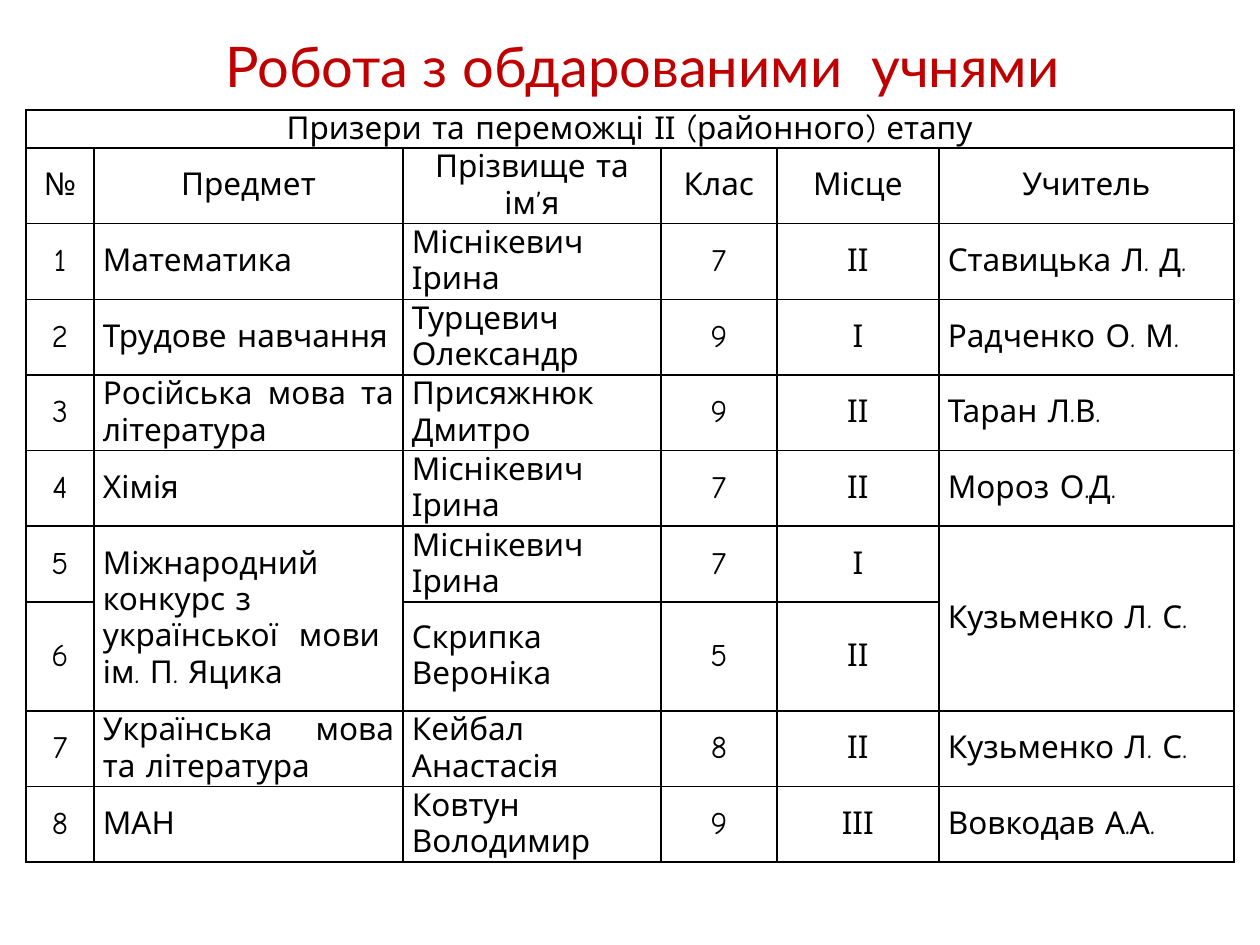
import pptx
import pptx.util
import pptx.dml.color
import pptx.enum.text
import pptx.oxml
import pptx.oxml.ns
from dataclasses import dataclass


@dataclass(frozen=True)
class Theme:
    title: str = "C00000"
    text: str = "000000"
    border: str = "000000"
    title_font: str = "Lato"
    table_font: str = "Comic Neue"
    title_size: int = 32
    table_size: int = 18
    border_width: int = 1


theme = Theme()
SCALE = 914400 / 126
ALIGN = pptx.enum.text.PP_ALIGN


def px(n):
    return pptx.util.Emu(round(n * SCALE))


def style(p, name, size, color, align):
    p.font.name = name
    p.font.size = pptx.util.Pt(size)
    p.font.color.rgb = pptx.dml.color.RGBColor.from_string(color)
    p.alignment = align


prs = pptx.Presentation()
prs.slide_width, prs.slide_height = px(1260), px(945)
s = prs.slides.add_slide(prs.slide_layouts[6])

tb = s.shapes.add_textbox(px(26), px(25), px(1234), px(81))
tf = tb.text_frame
tf.word_wrap = True
tf.auto_size = pptx.enum.text.MSO_AUTO_SIZE.SHAPE_TO_FIT_TEXT
p = tf.paragraphs[0]
p.text = "Робота з обдарованими  учнями"
style(p, theme.title_font, theme.title_size, theme.title, ALIGN.CENTER)

rows = [
    ["Призери та переможці ІІ (районного) етапу", "", "", "", "", ""],
    ["№", "Предмет", "Прізвище та ім’я", "Клас", "Місце", "Учитель"],
    ["1", "Математика", "Міснікевич Ірина", "7", "ІІ", "Ставицька Л. Д."],
    ["2", "Трудове навчання", "Турцевич Олександр", "9", "І", "Радченко О. М."],
    ["3", "Російська мова та література", "Присяжнюк Дмитро", "9", "ІІ", "Таран Л.В."],
    ["4", "Хімія", "Міснікевич Ірина", "7", "ІІ", "Мороз О.Д."],
    ["5", "Міжнародний\nконкурс з української  мови\nім. П. Яцика",
     "Міснікевич Ірина", "7", "І", "Кузьменко Л. С."],
    ["6", "", "Скрипка Вероніка", "5", "ІІ", ""],
    ["7", "Українська мова та література", "Кейбал Анастасія", "8", "ІІ", "Кузьменко Л. С."],
    ["8", "МАН", "Ковтун Володимир", "9", "ІІІ", "Вовкодав А.А."],
]
widths = [68, 309, 258, 116, 162, 295]
heights = [38] + [75] * 6 + [109] + [75] * 2
justified = {1, 2, 5}

table = s.shapes.add_table(len(rows), len(widths), px(26), px(110),
                           px(sum(widths)), px(sum(heights))).table
for col, width in zip(table.columns, widths):
    col.width = px(width)
for row, height in zip(table.rows, heights):
    row.height = px(height)

for r, values in enumerate(rows):
    for c, value in enumerate(values):
        cell = table.cell(r, c)
        cell.text = value
        cell.vertical_anchor = pptx.enum.text.MSO_ANCHOR.MIDDLE
        cell.margin_left = cell.margin_right = px(9)
        cell.margin_top = cell.margin_bottom = 0
        paragraphs = cell.text_frame.paragraphs
        if len(paragraphs) > 1:
            align = ALIGN.LEFT
        elif r > 1 and c in justified:
            align = ALIGN.JUSTIFY
        else:
            align = ALIGN.CENTER
        for p in paragraphs:
            style(p, theme.table_font, theme.table_size, theme.text, align)
        tcPr = cell._tc.get_or_add_tcPr()
        for side in ("lnL", "lnR", "lnT", "lnB"):
            tcPr.append(pptx.oxml.parse_xml(
                f'<a:{side} {pptx.oxml.ns.nsdecls("a")} w="{theme.border_width * 12700}">'
                f'<a:solidFill><a:srgbClr val="{theme.border}"/></a:solidFill></a:{side}>'))
        cell.fill.background()

table.cell(0, 0).merge(table.cell(0, 5))
for c in (1, 5):
    table.cell(6, c).merge(table.cell(7, c))

prs.save("out.pptx")
